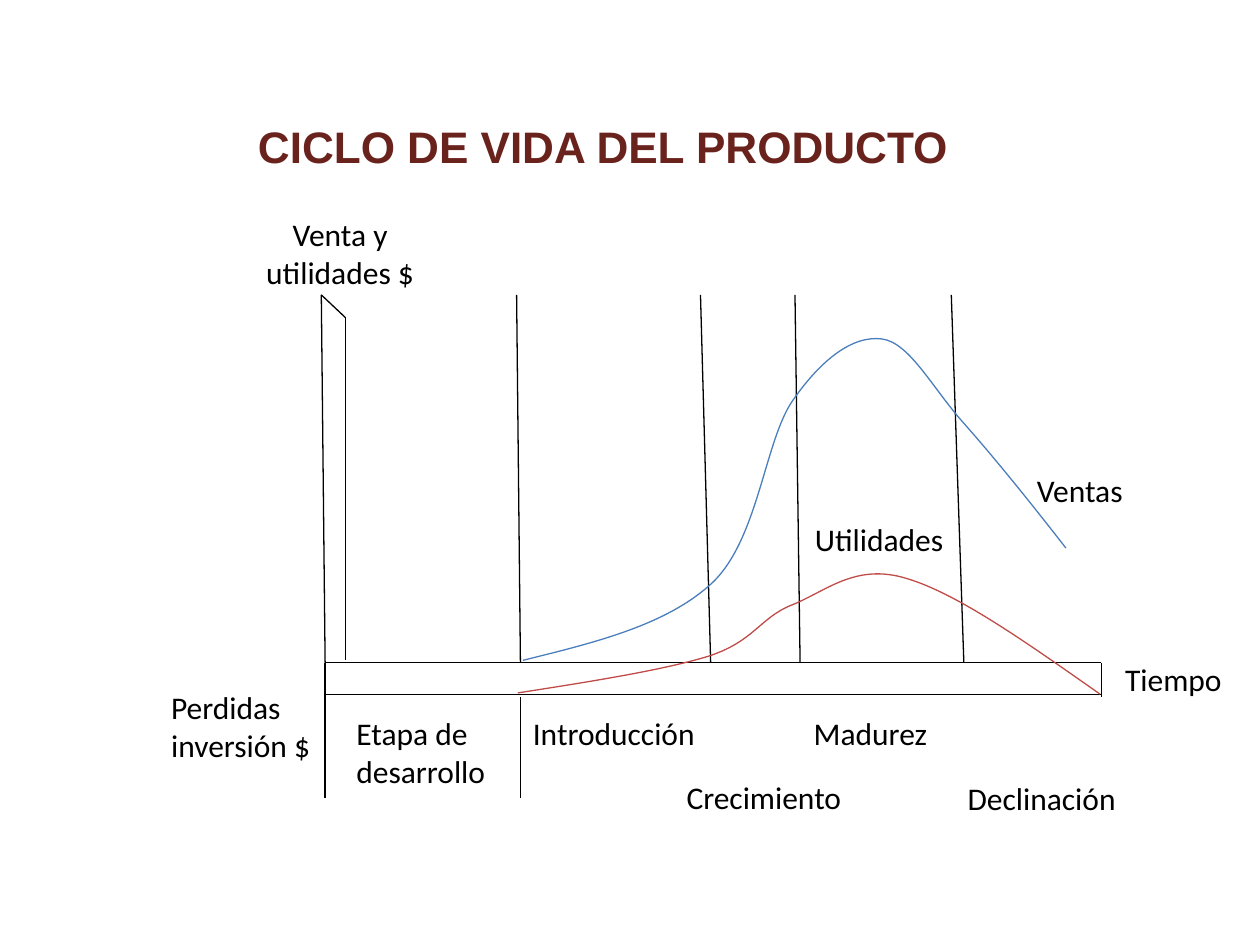
from lxml import etree
from pptx import Presentation
from pptx.dml.color import RGBColor
from pptx.enum.shapes import MSO_CONNECTOR
from pptx.enum.text import MSO_ANCHOR, MSO_AUTO_SIZE, PP_ALIGN
from pptx.oxml.ns import qn
from pptx.util import Pt

STRAIGHT = MSO_CONNECTOR.STRAIGHT
LEFT, CENTER = PP_ALIGN.LEFT, PP_ALIGN.CENTER
BLACK = RGBColor(0, 0, 0)
MAROON = RGBColor(0x6A, 0x22, 0x1D)
BLUE = RGBColor(0x4B, 0x7E, 0xBC)
RED = RGBColor(0xBF, 0x4C, 0x48)

TITLE = "CICLO DE VIDA DEL PRODUCTO "
TITLE_BOX = (127.4, 50.4, 441.4, 66.2)

TOP, AXIS, BAND, BOTTOM = 168.5, 378.7, 396.7, 455.8
BAND_END = 398.2
START, DEV_END, END = 185.8, 297.4, 629.3
AXIS_TOP, INNER = 183.6, 197.3

# Stage dividers: x at the top, x at the time axis
DIVIDERS = [(AXIS_TOP, START), (295.2, DEV_END), (400.3, 406.1),
            (454.3, 457.2), (543.6, 550.8)]
LINES = [(x1, TOP, x2, AXIS) for x1, x2 in DIVIDERS] + [
    (START, AXIS, END, AXIS),
    (START, BAND, END, BAND),
    (END, AXIS, END, BAND_END),
    (START, AXIS, START, BOTTOM),
    (DEV_END, BAND_END, DEV_END, BOTTOM),
    (AXIS_TOP, TOP, INNER, 181.4),
    (INNER, 181.4, INNER, 377.3),
]

# Start point, then two control points and an end point for each Bezier piece
SALES = [(298.8, 377.3),
         (339.8, 367.2), (381.6, 357.1), (407.5, 332.6),
         (433.4, 307.4), (437, 252), (452.9, 229),
         (469.4, 205.2), (487.4, 191.5), (504, 193.7),
         (519.8, 195.8), (532.8, 221.8), (550.8, 241.9),
         (568.1, 261.4), (589, 287.3), (609.1, 313.2)]
PROFITS = [(295.9, 396),
           (337.7, 389.5), (378.7, 383), (404.6, 375.1),
           (431.3, 366.5), (434.2, 352.8), (452.9, 345.6),
           (472.3, 337.7), (488.9, 321.8), (517.7, 330.5),
           (547.2, 339.1), (587.5, 367.9), (628.6, 396.7)]

# Text, left, top, width, height, alignment
LABELS = [
    ("Venta y utilidades $", 129.6, 119.5, 129.6, 51.1, CENTER),
    ("Utilidades", 458.6, 293.8, 88.6, 28.8, LEFT),
    ("Ventas", 585.4, 265.7, 110.9, 28.8, LEFT),
    ("Tiempo", 635.8, 373.7, 71.3, 28.8, LEFT),
    ("Perdidas inversión $", 90.7, 389.5, 97.9, 51.1, LEFT),
    ("Etapa de desarrollo", 196.6, 404.6, 97.9, 51.1, LEFT),
    ("Introducción", 297.4, 404.6, 108.7, 28.8, LEFT),
    ("Crecimiento", 385.2, 441, 138.2, 28.8, LEFT),
    ("Madurez", 457.9, 404.6, 90.7, 28.8, LEFT),
    ("Declinación", 545.8, 441.4, 108.7, 28.8, LEFT),
]


def set_text(sp, text, align, font, size, color, bold=False):
    tf = sp.text_frame
    tf.text = text
    tf.word_wrap = True
    p = tf.paragraphs[0]
    p.alignment = align
    f = p.runs[0].font
    f.name, f.size, f.bold = font, Pt(size), bold
    f.color.rgb = color
    return tf


def set_line(sp, color):
    sp.line.color.rgb = color
    sp.line.width = Pt(0.75)


def add_line(shapes, x1, y1, x2, y2):
    line = shapes.add_connector(STRAIGHT, Pt(x1), Pt(y1), Pt(x2), Pt(y2))
    set_line(line, BLACK)
    etree.SubElement(line._element.spPr, qn("a:effectLst"))


def add_curve(shapes, points, color):
    """Draw the points as a freeform and turn each three segments into a Bezier."""
    pts = [(Pt(x), Pt(y)) for x, y in points]
    builder = shapes.build_freeform(*pts[0])
    builder.add_line_segments(pts[1:], close=False)
    sp = builder.convert_to_shape()
    sp.shadow.inherit = False
    sp.fill.background()
    set_line(sp, color)
    path = next(sp._element.iter(qn("a:path")))
    segments = path.findall(qn("a:lnTo"))
    for i in range(0, len(segments), 3):
        bezier = etree.SubElement(path, qn("a:cubicBezTo"))
        for segment in segments[i:i + 3]:
            bezier.append(segment[0])
            path.remove(segment)


def main():
    prs = Presentation()
    prs.slide_width, prs.slide_height = Pt(720), Pt(540)
    s = prs.slides.add_slide(prs.slide_layouts[5])

    title = s.shapes.title
    title.left, title.top, title.width, title.height = map(Pt, TITLE_BOX)
    tf = set_text(title, TITLE, CENTER, "Arial", 25.2, MAROON, bold=True)
    tf.vertical_anchor = MSO_ANCHOR.MIDDLE

    diagram = s.shapes.add_group_shape().shapes
    for line in LINES:
        add_line(diagram, *line)
    add_curve(diagram, SALES, BLUE)
    add_curve(diagram, PROFITS, RED)
    for text, *box, align in LABELS:
        sp = diagram.add_textbox(*map(Pt, box))
        tf = set_text(sp, text, align, "Calibri", 18, BLACK)
        tf.auto_size = MSO_AUTO_SIZE.SHAPE_TO_FIT_TEXT

    prs.save("out.pptx")


if __name__ == "__main__":
    main()
